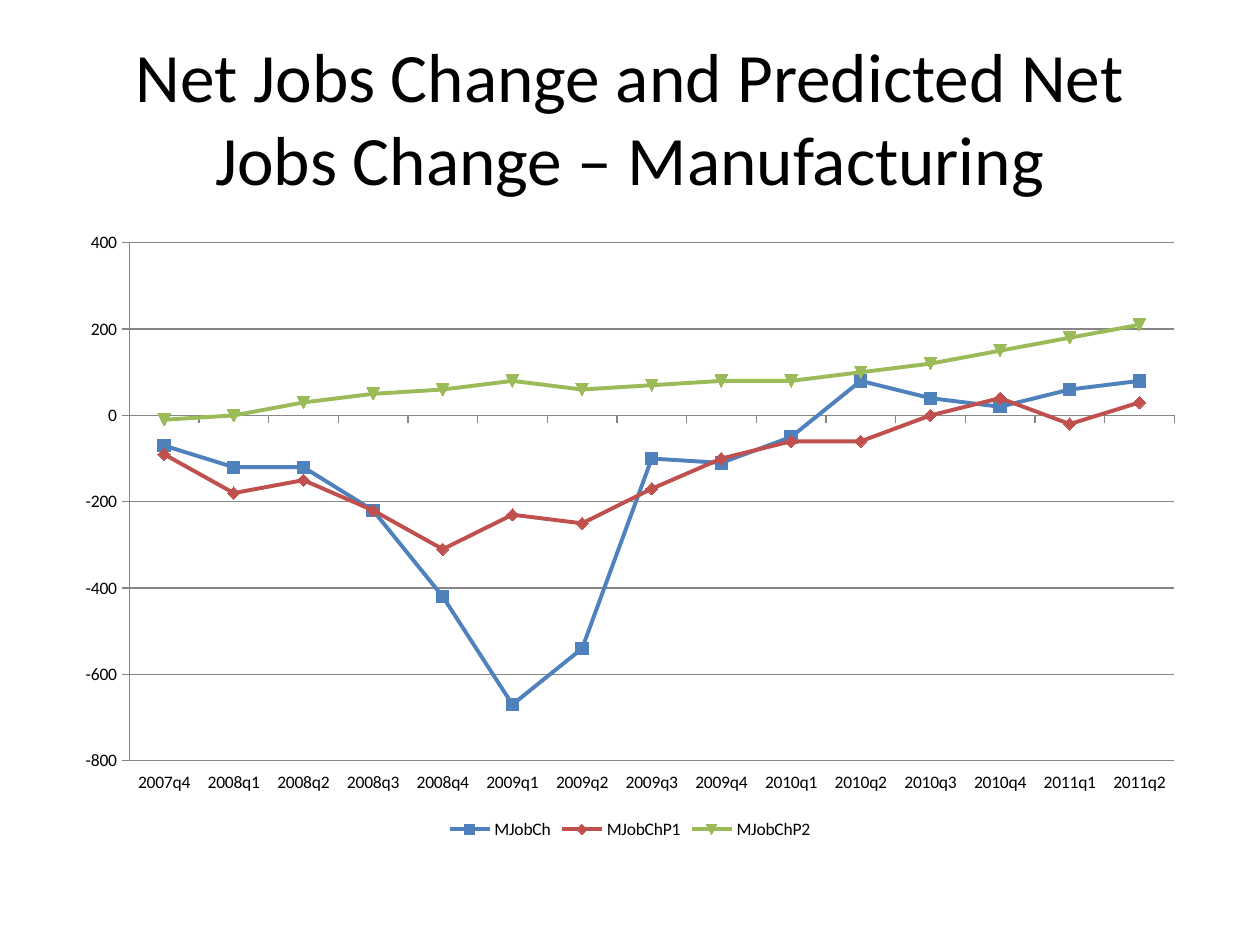
from dataclasses import dataclass

from pptx import Presentation
from pptx.chart.data import CategoryChartData
from pptx.dml.color import RGBColor
from pptx.enum.chart import (XL_CHART_TYPE, XL_LEGEND_POSITION,
                             XL_TICK_LABEL_POSITION, XL_TICK_MARK)
from pptx.enum.text import MSO_ANCHOR, MSO_AUTO_SIZE, PP_ALIGN
from pptx.util import Inches, Pt

LINE_MARKERS = XL_CHART_TYPE.LINE_MARKERS
LEGEND_BOTTOM = XL_LEGEND_POSITION.BOTTOM
LABELS_LOW = XL_TICK_LABEL_POSITION.LOW
TICK_OUT, TICK_NONE = XL_TICK_MARK.OUTSIDE, XL_TICK_MARK.NONE
MIDDLE, CENTER = MSO_ANCHOR.MIDDLE, PP_ALIGN.CENTER
TITLE_ONLY = 5


@dataclass(frozen=True)
class Theme:
    font: str = "Calibri"
    text: RGBColor = RGBColor(0x00, 0x00, 0x00)
    axis: RGBColor = RGBColor(0x86, 0x86, 0x86)
    title_size: Pt = Pt(39.6)
    chart_size: Pt = Pt(10)
    axis_width: Pt = Pt(0.75)
    series_width: Pt = Pt(2.25)
    marker_size: int = 7


THEME = Theme()

QUARTERS = [f"{year}q{quarter}" for year in range(2007, 2012)
            for quarter in range(1, 5)][3:18]

# Series name: (colour, net jobs change by quarter)
JOBS = {
    "MJobCh": ("4F81BD", [-70, -120, -120, -220, -420, -670, -540, -100,
                          -110, -50, 80, 40, 20, 60, 80]),
    "MJobChP1": ("C0504D", [-90, -180, -150, -220, -310, -230, -250, -170,
                            -100, -60, -60, 0, 40, -20, 30]),
    "MJobChP2": ("9BBB59", [-10, 0, 30, 50, 60, 80, 60, 70,
                            80, 80, 100, 120, 150, 180, 210]),
}


def style_font(font, size):
    font.name, font.size = THEME.font, size
    font.color.rgb = THEME.text


def style_line(line, color, width):
    line.color.rgb = color
    line.width = width


def set_title(slide, text):
    sp = slide.shapes.title
    sp.left, sp.top = Inches(0.5), Inches(0.3)
    sp.width, sp.height = Inches(9), Inches(1.25)
    tf = sp.text_frame
    tf.text = text
    tf.word_wrap = True
    tf.auto_size = MSO_AUTO_SIZE.NONE
    tf.vertical_anchor = MIDDLE
    p = tf.paragraphs[0]
    p.alignment = CENTER
    style_font(p.font, THEME.title_size)


def style_axis(axis):
    axis.major_tick_mark, axis.minor_tick_mark = TICK_OUT, TICK_NONE
    style_line(axis.format.line, THEME.axis, THEME.axis_width)


def style_series(series, color):
    series.smooth = False
    style_line(series.format.line, color, THEME.series_width)
    marker = series.marker
    marker.size = THEME.marker_size
    marker.format.fill.solid()
    marker.format.fill.fore_color.rgb = color
    marker.format.line.color.rgb = color


def add_jobs_chart(slide):
    data = CategoryChartData(number_format="General")
    data.categories = QUARTERS
    for name, (_, values) in JOBS.items():
        data.add_series(name, values)
    chart = slide.shapes.add_chart(LINE_MARKERS, Inches(0.5), Inches(1.75),
                                   Inches(9), Inches(4.95), data).chart
    style_font(chart.font, THEME.chart_size)
    chart.has_title = False
    chart.has_legend = True
    chart.legend.position = LEGEND_BOTTOM
    chart.legend.include_in_layout = False

    # Axes
    style_axis(chart.category_axis)
    chart.category_axis.tick_label_position = LABELS_LOW
    value_axis = chart.value_axis
    style_axis(value_axis)
    value_axis.minimum_scale, value_axis.maximum_scale = -800, 400
    value_axis.major_unit = 200
    value_axis.has_major_gridlines = True
    style_line(value_axis.major_gridlines.format.line,
               THEME.axis, THEME.axis_width)

    # Series
    plot = chart.plots[0]
    plot.vary_by_categories = False
    for series in plot.series:
        style_series(series, RGBColor.from_string(JOBS[series.name][0]))


def main():
    prs = Presentation()
    prs.slide_width, prs.slide_height = Inches(10), Inches(7.5)
    slide = prs.slides.add_slide(prs.slide_layouts[TITLE_ONLY])
    set_title(slide, "Net Jobs Change and Predicted Net Jobs Change – Manufacturing")
    add_jobs_chart(slide)
    prs.save("out.pptx")


if __name__ == "__main__":
    main()
